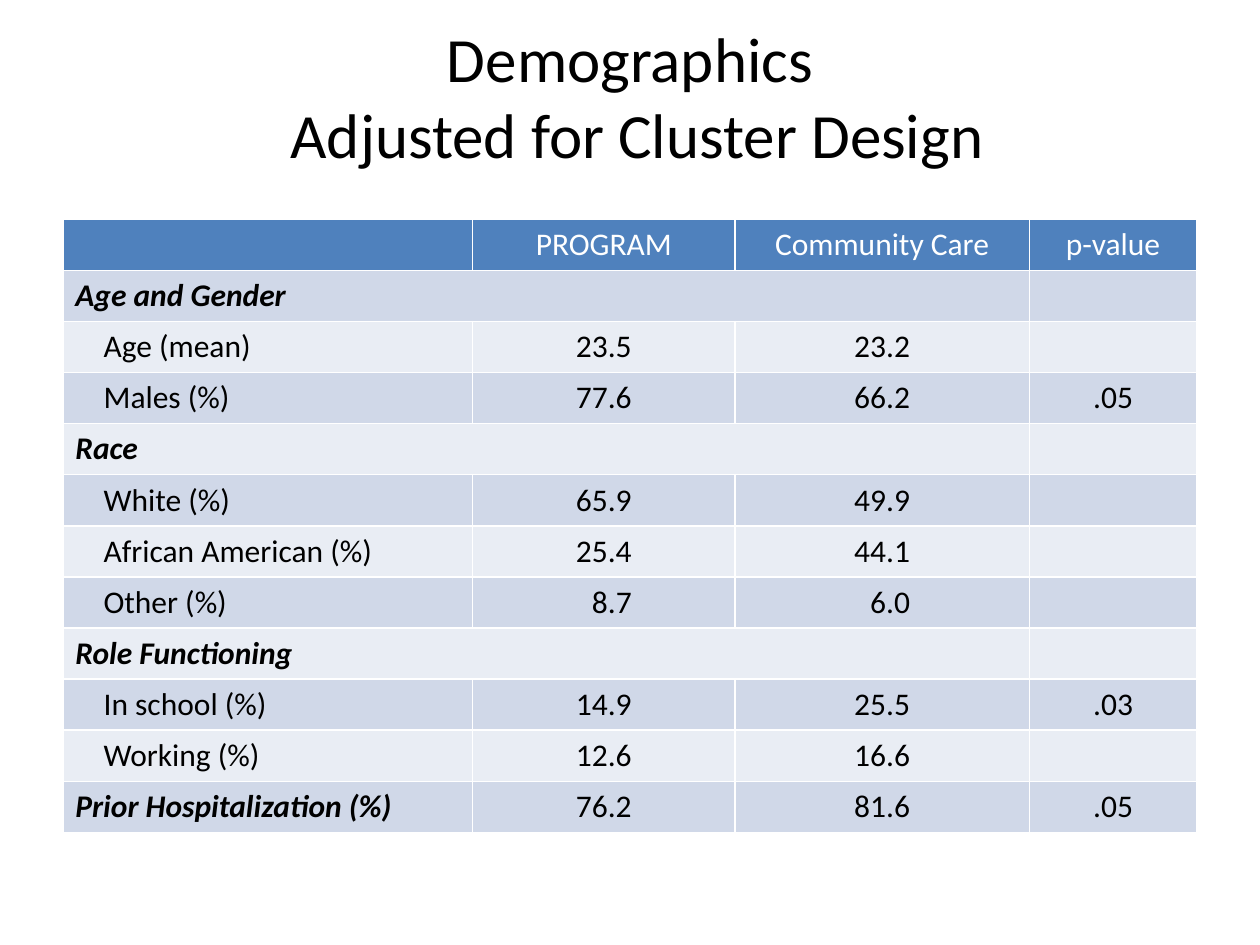
from dataclasses import dataclass

from pptx import Presentation
from pptx.dml.color import RGBColor
from pptx.enum.text import MSO_ANCHOR, PP_ALIGN
from pptx.slide import Slide
from pptx.table import Table, _Cell
from pptx.util import Cm, Pt

FONT = "Calibri"
BLACK = RGBColor(0x00, 0x00, 0x00)
WHITE = RGBColor(0xFF, 0xFF, 0xFF)
HEADER_BLUE = RGBColor(0x4F, 0x81, 0xBD)
BANDS = (RGBColor(0xD0, 0xD8, 0xE8), RGBColor(0xE9, 0xED, 0xF4))

COLUMN_WIDTHS = (Cm(8.26), Cm(5.29), Cm(5.93), Cm(3.38))
ROW_HEIGHT = Cm(1.03)
CELL_MARGIN = Cm(0.25)
DETAIL_INDENT = Cm(0.57)
DIGIT_WIDTH = Cm(0.32)

TITLE_LINES = ("Demographics", " Adjusted for Cluster Design")
HEADINGS = ("", "PROGRAM", "Community Care", "p-value")


@dataclass(frozen=True)
class Measure:
    label: str
    program: str = ""
    community: str = ""
    p_value: str = ""
    emphasized: bool = False

    @property
    def is_section(self) -> bool:
        return not self.program


MEASURES = (
    Measure("Age and Gender", emphasized=True),
    Measure("Age (mean)", "23.5", "23.2"),
    Measure("Males (%)", "77.6", "66.2", ".05"),
    Measure("Race", emphasized=True),
    Measure("White (%)", "65.9", "49.9"),
    Measure("African American (%)", "25.4", "44.1"),
    Measure("Other (%)", "8.7", "6.0"),
    Measure("Role Functioning", emphasized=True),
    Measure("In school (%)", "14.9", "25.5", ".03"),
    Measure("Working (%)", "12.6", "16.6"),
    Measure("Prior Hospitalization (%)", "76.2", "81.6", ".05", emphasized=True),
)


def add_title(slide: Slide) -> None:
    title = slide.shapes.title
    title.left, title.top, title.width, title.height = Cm(1.27), Cm(0.33), Cm(22.86), Cm(3.18)
    title.text_frame.vertical_anchor = MSO_ANCHOR.MIDDLE
    heading = title.text_frame.paragraphs[0]
    heading.alignment = PP_ALIGN.CENTER
    for index, line in enumerate(TITLE_LINES):
        if index:
            heading.add_line_break()
        run = heading.add_run()
        run.text = line
        run.font.name, run.font.size = FONT, Pt(36)
        run.font.color.rgb = BLACK


def fill_cell(cell: _Cell, text: str, fill: RGBColor, color: RGBColor = BLACK,
              align: PP_ALIGN = PP_ALIGN.CENTER, emphasized: bool = False,
              indent: int = 0) -> None:
    cell.fill.solid()
    cell.fill.fore_color.rgb = fill
    cell.margin_left = CELL_MARGIN + indent
    if not text:
        return
    paragraph = cell.text_frame.paragraphs[0]
    paragraph.alignment = align
    run = paragraph.add_run()
    run.text = text
    run.font.name, run.font.size = FONT, Pt(18)
    run.font.bold = run.font.italic = emphasized
    run.font.color.rgb = color


def fill_measure(table: Table, row: int, measure: Measure) -> None:
    """Write one body row; section rows span all columns but the p-value."""
    band = BANDS[(row - 1) % 2]
    fill_cell(table.cell(row, 0), measure.label, band, align=PP_ALIGN.LEFT,
              emphasized=measure.emphasized,
              indent=0 if measure.emphasized else DETAIL_INDENT)
    if measure.is_section:
        table.cell(row, 0).merge(table.cell(row, 2))
    else:
        for column, value in enumerate((measure.program, measure.community), start=1):
            # One-digit values move right so that decimals line up.
            indent = DIGIT_WIDTH if value.index(".") == 1 else 0
            fill_cell(table.cell(row, column), value, band, indent=indent)
    fill_cell(table.cell(row, 3), measure.p_value, band)


def add_demographics(slide: Slide) -> None:
    row_count = len(MEASURES) + 1
    table = slide.shapes.add_table(
        row_count, len(HEADINGS), Cm(1.27), Cm(4.42),
        sum(COLUMN_WIDTHS), ROW_HEIGHT * row_count).table
    for column, width in zip(table.columns, COLUMN_WIDTHS):
        column.width = width
    for row in table.rows:
        row.height = ROW_HEIGHT
    for column, heading in enumerate(HEADINGS):
        fill_cell(table.cell(0, column), heading, HEADER_BLUE, WHITE)
    for row, measure in enumerate(MEASURES, start=1):
        fill_measure(table, row, measure)


def main() -> None:
    presentation = Presentation()
    presentation.slide_width, presentation.slide_height = Cm(25.4), Cm(19.05)
    slide = presentation.slides.add_slide(presentation.slide_layouts[5])
    add_title(slide)
    add_demographics(slide)
    presentation.save("out.pptx")


if __name__ == "__main__":
    main()
